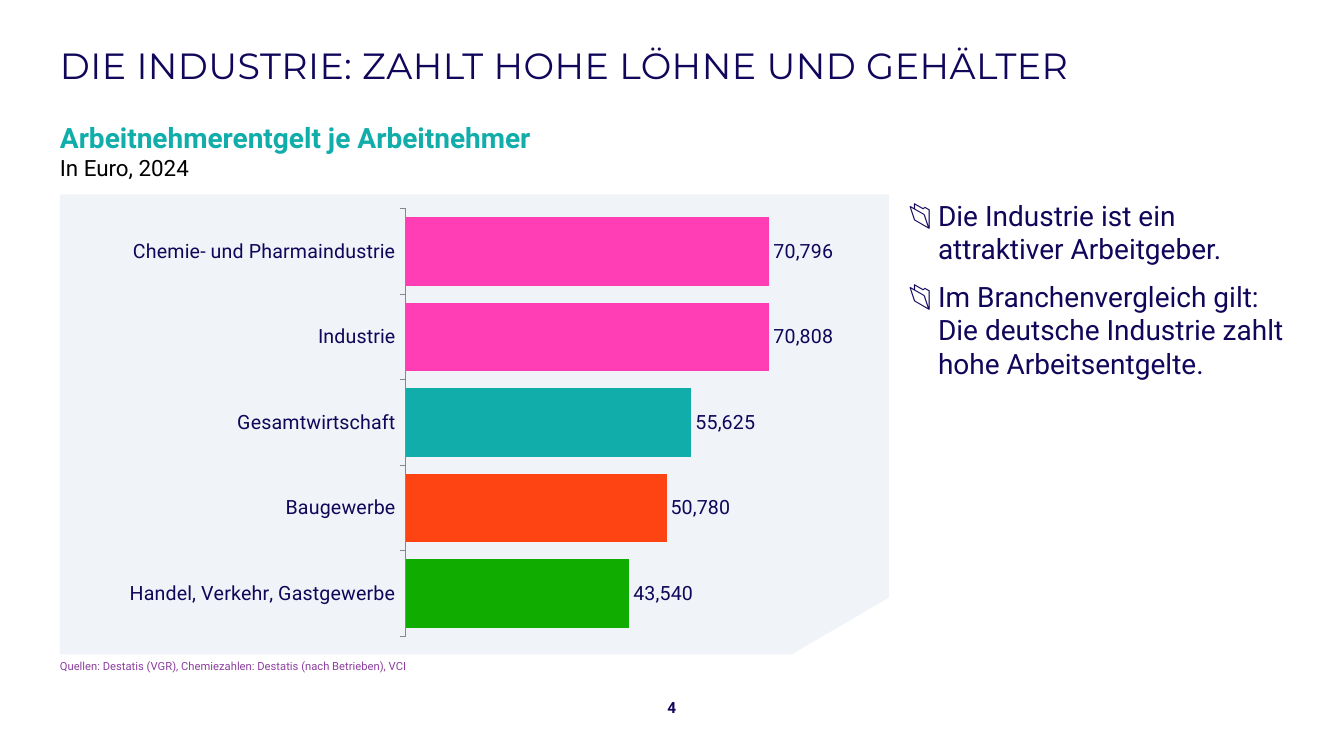
from dataclasses import dataclass

from lxml import etree
from pptx import Presentation
from pptx import util as u
from pptx.chart.data import CategoryChartData
from pptx.dml.color import RGBColor
from pptx.enum import chart as charts, text
from pptx.oxml.ns import qn


@dataclass(frozen=True)
class Theme:
    navy: str = "10065A"
    teal: str = "10ADAA"
    pink: str = "FF3EB5"
    orange: str = "FF4414"
    green: str = "10AD00"
    purple: str = "8C3E9F"
    black: str = "000000"
    grey: str = "888888"
    panel: str = "F0F3F7"
    heading_font: str = "Montserrat"
    body_font: str = "Roboto"
    title: int = 26
    body: int = 20
    subtitle: int = 16
    labels: int = 14
    page: int = 11
    source: int = 8


THEME = Theme()
LEFT = 1.51
SECTORS = [
    ("Handel, Verkehr, Gastgewerbe", 43540, THEME.green),
    ("Baugewerbe", 50780, THEME.orange),
    ("Gesamtwirtschaft", 55625, THEME.teal),
    ("Industrie", 70808, THEME.pink),
    ("Chemie- und Pharmaindustrie", 70796, THEME.pink),
]
MESSAGES = [
    "Die Industrie ist ein attraktiver Arbeitgeber.",
    "Im Branchenvergleich gilt: Die deutsche Industrie zahlt hohe Arbeitsentgelte.",
]


def style_font(font, size, color, name=THEME.body_font, bold=False):
    font.size = u.Pt(size)
    font.name = name
    font.bold = bold
    font.color.rgb = RGBColor.from_string(color)


def set_frame(frame, inset=0.0):
    """Wrap the text, with no side margins and the given top and bottom ones."""
    frame.word_wrap = True
    frame.auto_size = text.MSO_AUTO_SIZE.NONE
    frame.margin_left = frame.margin_right = 0
    frame.margin_top = frame.margin_bottom = u.Cm(inset)


def add_title(slide, wording):
    title = slide.shapes.title
    title.left, title.top, title.width, title.height = map(u.Cm, (LEFT, 0.38, 31, 2.49))
    frame = title.text_frame
    set_frame(frame, 0.1)
    frame.vertical_anchor = text.MSO_ANCHOR.MIDDLE
    frame.text = wording
    paragraph = frame.paragraphs[0]
    paragraph.alignment = text.PP_ALIGN.LEFT
    run = paragraph.runs[0]
    style_font(run.font, THEME.title, THEME.navy, THEME.heading_font)
    run.font._element.set("spc", "30")


def add_line(slide, wording, box, size, color, bold=False):
    frame = slide.shapes.add_textbox(*map(u.Cm, box)).text_frame
    set_frame(frame)
    frame.text = wording
    style_font(frame.paragraphs[0].runs[0].font, size, color, bold=bold)
    return frame


def add_bullet(paragraph):
    indent = u.Cm(0.74)
    props = paragraph._p.get_or_add_pPr()
    props.set("marL", str(indent))
    props.set("indent", str(-indent))
    color = etree.SubElement(props, qn("a:buClr"))
    etree.SubElement(color, qn("a:srgbClr"), val=THEME.navy)
    etree.SubElement(props, qn("a:buFont"), typeface=THEME.body_font)
    etree.SubElement(props, qn("a:buChar"), char="📂")


def add_messages(slide, messages):
    frame = slide.shapes.add_textbox(*map(u.Cm, (22.9, 4.89, 9.6, 11.2))).text_frame
    set_frame(frame, 0.1)
    frame.text = "\n".join(messages)
    for number, paragraph in enumerate(frame.paragraphs):
        add_bullet(paragraph)
        if number:
            paragraph.space_before = u.Pt(10)
        style_font(paragraph.runs[0].font, THEME.body, THEME.navy)


def add_panel(slide):
    """Draw the chart's background with its lower right corner cut off."""
    top, right, bottom = 4.9, 22.4, 16.49
    outline = slide.shapes.build_freeform(u.Cm(LEFT), u.Cm(top))
    corners = [(right, top), (right, 15.06), (19.95, bottom), (LEFT, bottom)]
    outline.add_line_segments([(u.Cm(x), u.Cm(y)) for x, y in corners])
    panel = outline.convert_to_shape()
    panel.shadow.inherit = False
    panel.fill.solid()
    panel.fill.fore_color.rgb = RGBColor.from_string(THEME.panel)
    panel.line.fill.background()


def set_plot_area(chart, x, y, w, h):
    """Fix the inner plot area as fractions of the chart."""
    area = chart._chartSpace.chart.plotArea
    for old in area.findall(qn("c:layout")):
        area.remove(old)
    layout = etree.Element(qn("c:layout"))
    area.insert(0, layout)
    manual = etree.SubElement(layout, qn("c:manualLayout"))
    settings = dict(layoutTarget="inner", xMode="edge", yMode="edge", x=x, y=y, w=w, h=h)
    for tag, value in settings.items():
        etree.SubElement(manual, qn(f"c:{tag}"), val=str(value))


def add_pay_chart(slide, sectors):
    names, pay, colors = zip(*sectors)
    data = CategoryChartData(number_format="#,##0")
    data.categories = names
    data.add_series("Arbeitnehmerentgelt", pay)
    chart = slide.shapes.add_chart(
        charts.XL_CHART_TYPE.BAR_CLUSTERED, *map(u.Cm, (1.78, 5.15, 20.1, 10.9)), data
    ).chart
    chart.has_legend = chart.has_title = False
    style_font(chart.font, THEME.labels, THEME.navy)
    set_plot_area(chart, 0.42, 0.01, 0.58, 0.99)

    scale = chart.value_axis
    scale.minimum_scale, scale.maximum_scale = 0, 90000
    scale.has_major_gridlines = False
    scale.visible = False
    axis = chart.category_axis
    axis.major_tick_mark = charts.XL_TICK_MARK.OUTSIDE
    axis.format.line.color.rgb = RGBColor.from_string(THEME.grey)
    axis.format.line.width = u.Pt(0.75)
    style_font(axis.tick_labels.font, THEME.labels, THEME.navy)

    plot = chart.plots[0]
    plot.gap_width = 25
    plot.vary_by_categories = False
    plot.has_data_labels = True
    labels = plot.data_labels
    labels.show_value = True
    labels.number_format, labels.number_format_is_linked = "#,##0", False
    labels.position = charts.XL_LABEL_POSITION.OUTSIDE_END
    style_font(labels.font, THEME.labels, THEME.navy)
    for number, color in enumerate(colors):
        fill = plot.series[0].points[number].format.fill
        fill.solid()
        fill.fore_color.rgb = RGBColor.from_string(color)


def main():
    deck = Presentation()
    deck.slide_width, deck.slide_height = u.Cm(33.87), u.Cm(19.05)
    slide = deck.slides.add_slide(deck.slide_layouts[5])
    add_panel(slide)
    add_title(slide, "DIE INDUSTRIE: ZAHLT HOHE LÖHNE UND GEHÄLTER")
    add_line(slide, "Arbeitnehmerentgelt je Arbeitnehmer", (LEFT, 3.03, 31, 0.8),
             THEME.body, THEME.teal, bold=True)
    add_line(slide, "In Euro, 2024", (LEFT, 3.89, 31, 0.7), THEME.subtitle, THEME.black)
    add_pay_chart(slide, SECTORS)
    add_messages(slide, MESSAGES)
    add_line(slide, "Quellen: Destatis (VGR), Chemiezahlen: Destatis (nach Betrieben), VCI",
             (LEFT, 16.62, 28, 0.34), THEME.source, THEME.purple)
    page = add_line(slide, "4", (16.18, 17.48, 1.5, 0.7), THEME.page, THEME.navy, bold=True)
    page.vertical_anchor = text.MSO_ANCHOR.MIDDLE
    page.paragraphs[0].alignment = text.PP_ALIGN.CENTER
    deck.save("out.pptx")


if __name__ == "__main__":
    main()
